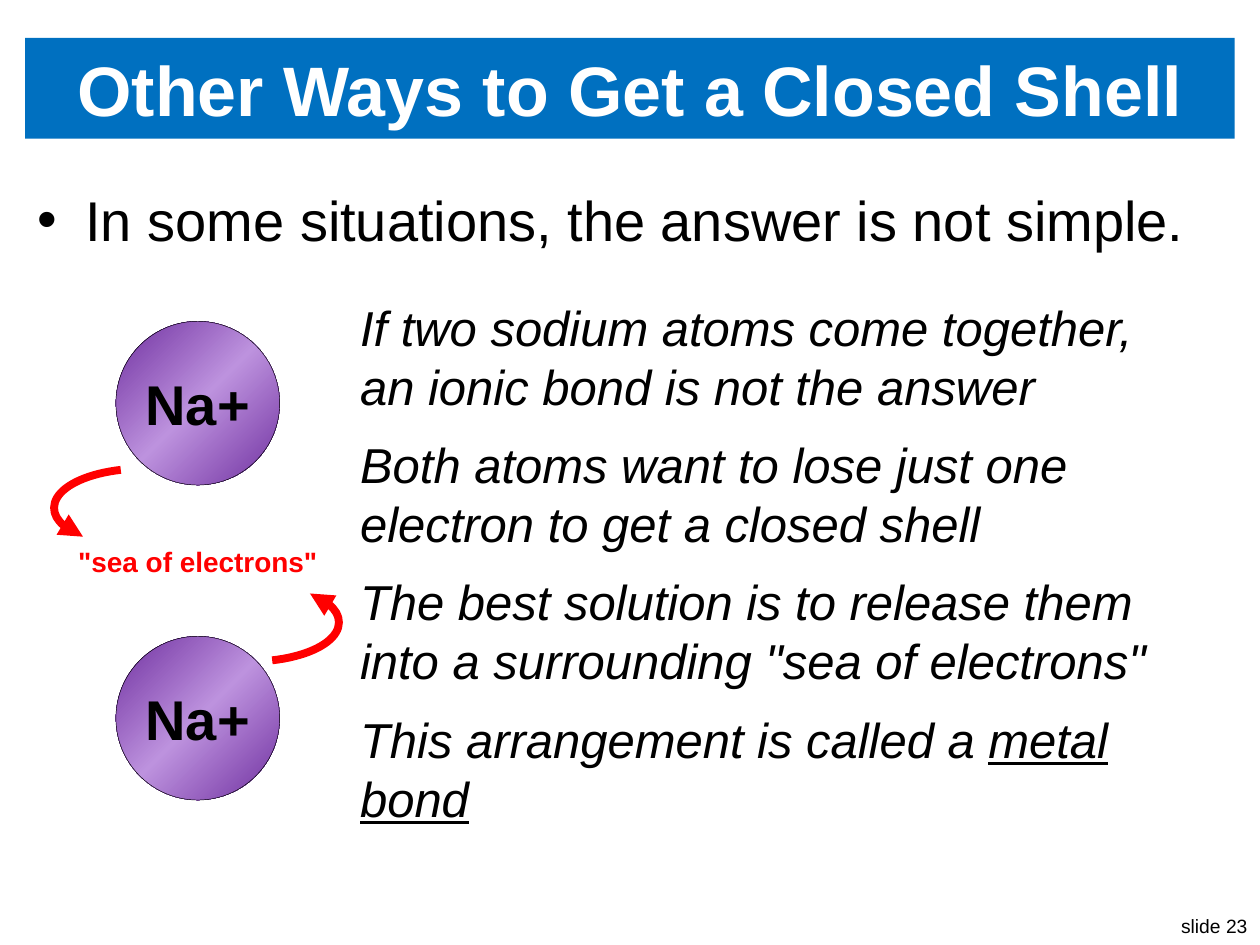
import lxml.etree
import pptx
import pptx.dml.color
import pptx.enum.shapes
import pptx.enum.text
import pptx.oxml
import pptx.oxml.ns
import pptx.util

Inches = pptx.util.Inches
Pt = pptx.util.Pt
RGBColor = pptx.dml.color.RGBColor
ALIGN = pptx.enum.text.PP_ALIGN
ANCHOR = pptx.enum.text.MSO_ANCHOR
AUTO_SIZE = pptx.enum.text.MSO_AUTO_SIZE
SHAPE = pptx.enum.shapes.MSO_SHAPE
qn = pptx.oxml.ns.qn

BLACK = RGBColor(0x00, 0x00, 0x00)
WHITE = RGBColor(0xFF, 0xFF, 0xFF)
BLUE = RGBColor(0x00, 0x70, 0xC0)
RED = RGBColor(0xFF, 0x00, 0x00)
PURPLE = RGBColor(0x70, 0x30, 0xA0)
LILAC = RGBColor(0xBD, 0x92, 0xDE)

STATEMENTS = [
    [("If two sodium atoms come together, an ionic bond is not the answer", {})],
    [("Both atoms want to lose just one electron to get a closed shell", {})],
    [('The best solution is to release them into a surrounding "sea of electrons"', {})],
    [("This arrangement is called a ", {}), ("metal bond", {"underline": True})],
]


def write_text(shape, runs, size, color=BLACK, align=ALIGN.LEFT, space_before=0, **font_format):
    """Fill the first paragraph with (text, extra font format) runs."""
    paragraph = shape.text_frame.paragraphs[0]
    paragraph.alignment = align
    paragraph.space_before = Pt(space_before)
    for text, extra in runs:
        run = paragraph.add_run()
        run.text = text
        run.font.color.rgb = color
        values = {"name": "Arial", "size": Pt(size), **font_format, **extra}
        for name, value in values.items():
            setattr(run.font, name, value)
    return paragraph


def add_text(slide, box, runs, size, wrap=True, **text_format):
    shape = slide.shapes.add_textbox(*map(Inches, box))
    shape.text_frame.word_wrap = wrap
    shape.text_frame.auto_size = AUTO_SIZE.SHAPE_TO_FIT_TEXT
    return write_text(shape, runs, size, **text_format)


def add_title(slide, box):
    shape = slide.shapes.add_shape(SHAPE.RECTANGLE, *map(Inches, box))
    shape.shadow.inherit = False
    shape.fill.solid()
    shape.fill.fore_color.rgb = BLUE
    shape.line.fill.background()
    shape.text_frame.word_wrap = True
    shape.text_frame.vertical_anchor = ANCHOR.MIDDLE
    write_text(shape, [("Other Ways to Get a Closed Shell", {})], 40,
               color=WHITE, align=ALIGN.CENTER, bold=True)


def add_lead(slide, box):
    paragraph = add_text(slide, box, [("In some situations, the answer is not simple.", {})],
                         32, space_before=12)
    # Bullet with hanging indent
    properties = paragraph._p.get_or_add_pPr()
    properties.set("marL", str(Inches(0.38)))
    properties.set("indent", str(-Inches(0.38)))
    lxml.etree.SubElement(properties, qn("a:buFont")).set("typeface", "Arial")
    lxml.etree.SubElement(properties, qn("a:buChar")).set("char", "•")


def add_statements(slide, box):
    left, top, width, height = box
    pitch = height / len(STATEMENTS)
    for index, runs in enumerate(STATEMENTS):
        add_text(slide, (left, top + index * pitch, width, 1.04), runs, 28,
                 space_before=12, italic=True)


def radial_fill(shape, stops):
    """Circular gradient centred on the bottom right corner."""
    stop_xml = "".join(
        f'<a:gs pos="{position * 1000}"><a:srgbClr val="{color}"/></a:gs>'
        for position, color in stops)
    gradient = pptx.oxml.parse_xml(
        f'<a:gradFill {pptx.oxml.ns.nsdecls("a")} rotWithShape="1"><a:gsLst>{stop_xml}</a:gsLst>'
        '<a:path path="circle"><a:fillToRect l="100000" t="100000"/></a:path>'
        '<a:tileRect r="-100000" b="-100000"/></a:gradFill>')
    shape._element.spPr.find(qn("a:prstGeom")).addnext(gradient)


def add_ion(slide, box):
    shape = slide.shapes.add_shape(SHAPE.OVAL, *map(Inches, box))
    shape.shadow.inherit = False
    radial_fill(shape, [(0, PURPLE), (50, LILAC), (100, PURPLE)])
    shape.line.color.rgb = BLACK
    shape.line.width = Pt(0.25)
    frame = shape.text_frame
    frame.vertical_anchor = ANCHOR.MIDDLE
    for side in ("left", "top", "right", "bottom"):
        setattr(frame, f"margin_{side}", 0)
    write_text(shape, [("Na+", {})], 32, align=ALIGN.CENTER, bold=True)


def add_curved_arrow(slide, box, flip):
    shape = slide.shapes.add_shape(SHAPE.ARC, *map(Inches, box))
    shape.shadow.inherit = False
    shape.adjustments[0] = 179.73
    shape.adjustments[1] = 15.61
    shape.fill.background()
    shape.line.color.rgb = RED
    shape.line.width = Pt(4.5)
    shape._element.spPr.find(qn("a:xfrm")).set(flip, "1")
    line = shape._element.spPr.find(qn("a:ln"))
    lxml.etree.SubElement(line, qn("a:tailEnd")).set("type", "triangle")


def add_metal_bond(slide, box):
    """Two ions that release electrons into the space between them."""
    left, top, width, height = box
    diameter = 1.3
    for ion_top in (top + height - diameter, top):
        add_ion(slide, (left + 0.49, ion_top, diameter, diameter))
    add_text(slide, (left + 0.04, top + 1.72, 2.2, 0.37), [('"sea of electrons"', {})], 16,
             color=RED, align=ALIGN.CENTER, bold=True)
    arrow_width, arrow_height = 1.4, 0.62
    add_curved_arrow(slide, (left, top + 1.17, arrow_width, arrow_height), "flipH")
    add_curved_arrow(slide, (left + width - arrow_width, top + 2.08, arrow_width, arrow_height),
                     "flipV")


def add_slide_number(slide, box):
    add_text(slide, box, [("slide 23", {})], 11, wrap=False, align=ALIGN.RIGHT)


def main():
    presentation = pptx.Presentation()
    presentation.slide_width = Inches(10)
    presentation.slide_height = Inches(7.5)
    slide = presentation.slides.add_slide(presentation.slide_layouts[6])

    add_slide_number(slide, (9.25, 7.21, 0.75, 0.29))
    add_title(slide, (0.2, 0.3, 9.6, 0.8))
    add_lead(slide, (0.2, 1.42, 9.6, 0.64))
    add_statements(slide, (2.76, 2.31, 6.6, 4.36))
    add_metal_bond(slide, (0.43, 2.55, 2.26, 3.8))

    presentation.save("out.pptx")


if __name__ == "__main__":
    main()
